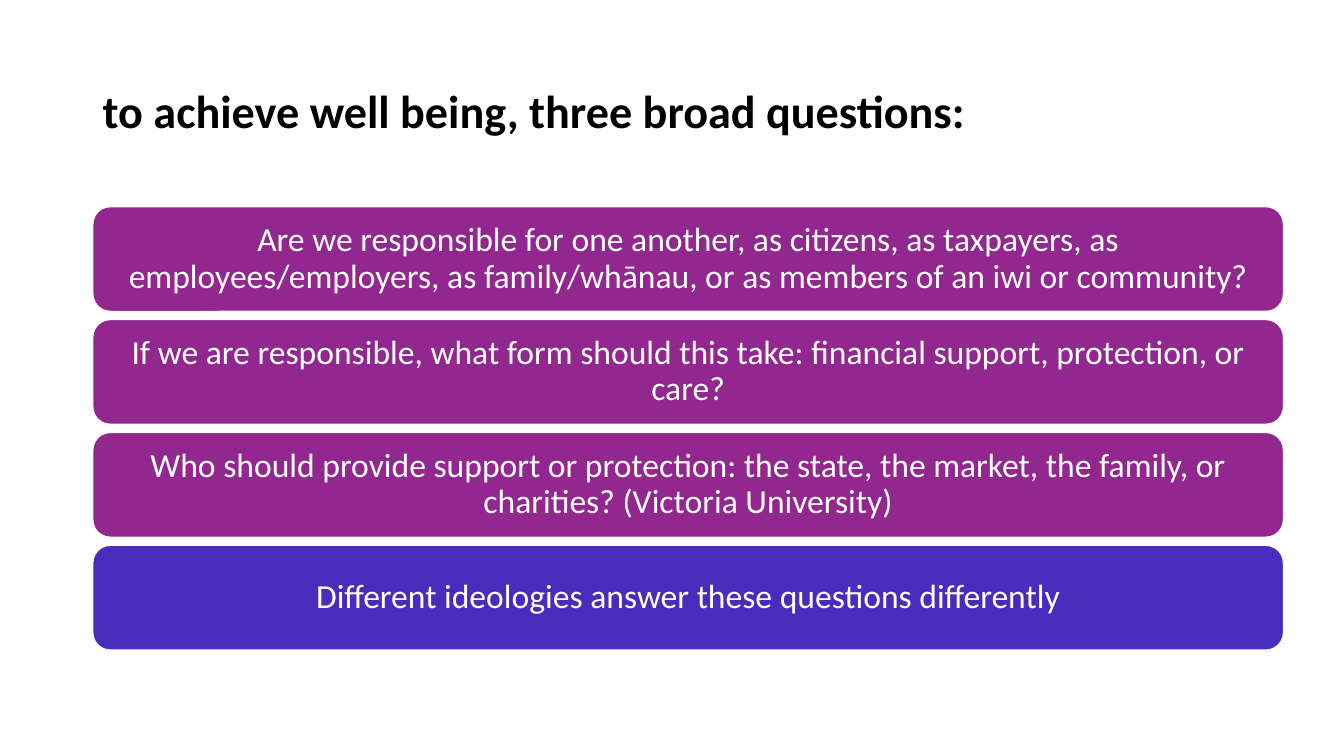
from dataclasses import dataclass

from pptx import Presentation
from pptx.dml.color import RGBColor
from pptx.enum.shapes import MSO_SHAPE
from pptx.enum.text import MSO_ANCHOR, PP_ALIGN
from pptx.slide import Slide
from pptx.text.text import TextFrame
from pptx.util import Inches, Pt

PURPLE, INDIGO, WHITE, BLACK = "92278F", "482CBC", "FFFFFF", "000000"
LEFT, BAR_TOP, BAR_WIDTH, BAR_HEIGHT, BAR_PITCH = 0.92, 2.05, 11.81, 1.04, 1.12


@dataclass
class Bar:
    text: str
    fill: str = PURPLE


BARS = [
    Bar("Are we responsible for one another, as citizens, as taxpayers, as "
        "employees/employers, as family/whānau, or as members of an iwi or community?"),
    Bar("If we are responsible, what form should this take: financial support, "
        "protection, or care?"),
    Bar("Who should provide support or protection: the state, the market, the family, "
        "or charities? (Victoria University)"),
    Bar("Different ideologies answer these questions differently", INDIGO),
]


def color(value: str) -> RGBColor:
    return RGBColor.from_string(value)


def write_text(tf: TextFrame, text: str, size: float, text_color: str,
               align: PP_ALIGN, bold: bool = False) -> None:
    frame_format = {"word_wrap": True, "vertical_anchor": MSO_ANCHOR.MIDDLE,
                    "margin_left": Inches(0.1), "margin_right": Inches(0.1)}
    for name, value in frame_format.items():
        setattr(tf, name, value)
    p = tf.paragraphs[0]
    p.alignment = align
    p.line_spacing = 0.9
    r = p.add_run()
    r.text = text
    for name, value in {"name": "Calibri", "size": Pt(size), "bold": bold}.items():
        setattr(r.font, name, value)
    r.font.color.rgb = color(text_color)


def add_title(s: Slide, text: str) -> None:
    sp = s.shapes.add_textbox(Inches(LEFT), Inches(0.4), Inches(11.5), Inches(1.45))
    write_text(sp.text_frame, text, 33, BLACK, PP_ALIGN.LEFT, bold=True)


def add_bar(s: Slide, bar: Bar, row: int) -> None:
    sp = s.shapes.add_shape(MSO_SHAPE.ROUNDED_RECTANGLE, Inches(LEFT),
                            Inches(BAR_TOP + row * BAR_PITCH),
                            Inches(BAR_WIDTH), Inches(BAR_HEIGHT))
    sp.shadow.inherit = False
    sp.fill.solid()
    sp.fill.fore_color.rgb = color(bar.fill)
    sp.line.color.rgb = color(WHITE)
    sp.line.width = Pt(1)
    write_text(sp.text_frame, bar.text, 24, WHITE, PP_ALIGN.CENTER)


def main() -> None:
    prs = Presentation()
    prs.slide_width, prs.slide_height = Inches(13.33), Inches(7.5)
    s = prs.slides.add_slide(prs.slide_layouts[6])

    # Heading
    add_title(s, "to achieve well being, three broad questions:")

    # Stacked question bars
    for row, bar in enumerate(BARS):
        add_bar(s, bar, row)

    prs.save("out.pptx")


if __name__ == "__main__":
    main()
